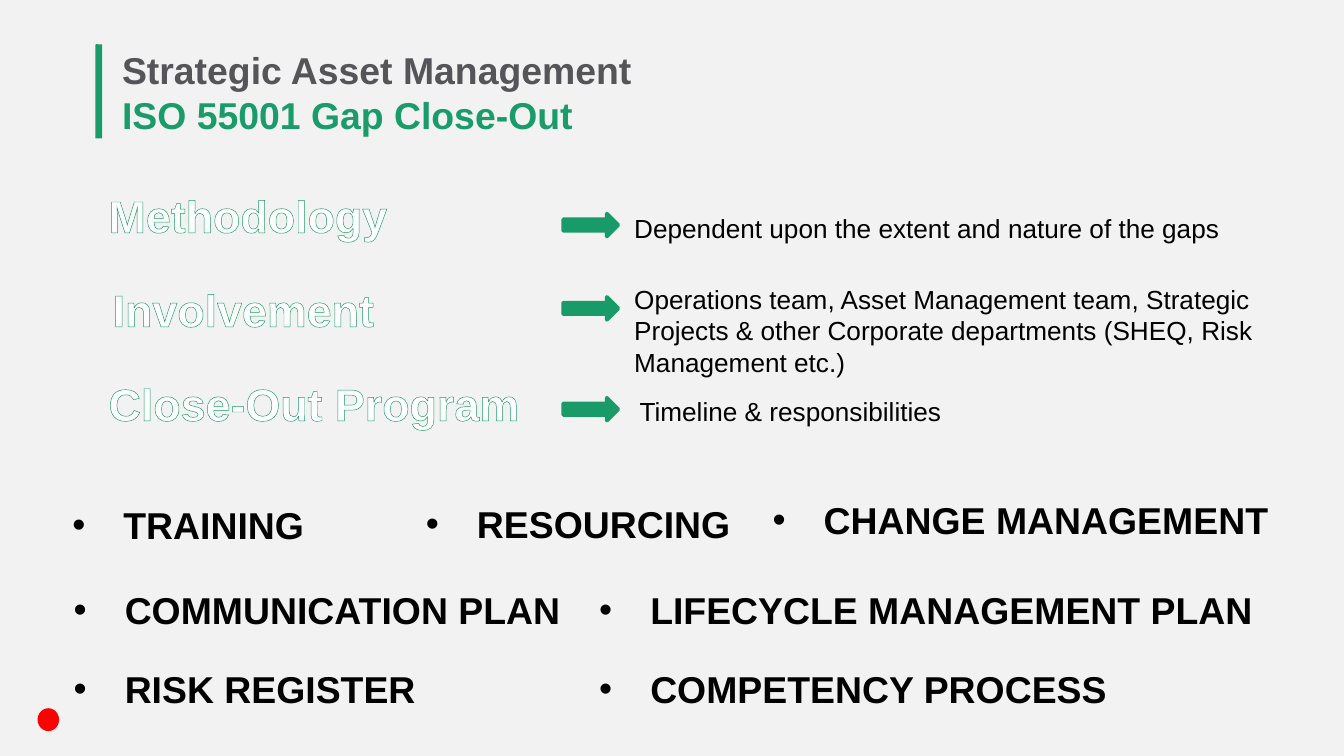
from lxml import etree
from pptx import Presentation
from pptx.dml.color import RGBColor
from pptx.enum import shapes, text
from pptx.oxml.ns import qn
from pptx.util import Inches, Pt

PAPER = RGBColor(0xF2, 0xF2, 0xF2)
GREEN = RGBColor(0x19, 0x9C, 0x69)
ARROW_GREEN = RGBColor(0x19, 0x9B, 0x69)
GREY = RGBColor(0x54, 0x54, 0x59)
RED = RGBColor(0xFF, 0x00, 0x00)
BLACK = RGBColor(0, 0, 0)
WHITE = RGBColor(0xFF, 0xFF, 0xFF)


def style(font, size, color, bold=False):
    font.name = "Arial"
    font.size = Pt(size)
    font.bold = bold
    font.color.rgb = color


def add_text(slide, left, top, width, height):
    box = slide.shapes.add_textbox(Inches(left), Inches(top), Inches(width), Inches(height))
    frame = box.text_frame
    frame.word_wrap = True
    return frame


def add_solid(slide, kind, left, top, width, height, color):
    solid = slide.shapes.add_shape(kind, Inches(left), Inches(top), Inches(width), Inches(height))
    solid.shadow.inherit = False
    solid.fill.solid()
    solid.fill.fore_color.rgb = color
    solid.line.fill.background()
    return solid


def add_color(parent, color):
    fill = etree.SubElement(parent, qn("a:solidFill"))
    etree.SubElement(fill, qn("a:srgbClr"), val=str(color))


def outline(run, color, width):
    line = etree.Element(qn("a:ln"), w=str(int(Pt(width))))
    add_color(line, color)
    run.font._element.insert(0, line)


def add_bullet(paragraph, indent):
    properties = paragraph._p.get_or_add_pPr()
    properties.set("marL", str(Inches(indent)))
    properties.set("indent", str(-Inches(indent)))
    bullet_color = etree.SubElement(properties, qn("a:buClr"))
    etree.SubElement(bullet_color, qn("a:srgbClr"), val=str(BLACK))
    etree.SubElement(properties, qn("a:buFont"), typeface="Arial")
    etree.SubElement(properties, qn("a:buChar"), char="•")


def add_header(slide, left, top, width, height):
    bar = add_solid(slide, shapes.MSO_SHAPE.ROUNDED_RECTANGLE, left, top + 0.05, 0.05, 0.7, GREEN)
    bar.adjustments[0] = 0.11
    title = add_text(slide, left + 0.1, top, width - 0.1, height)
    title.vertical_anchor = text.MSO_ANCHOR.MIDDLE
    title.margin_top = title.margin_bottom = Inches(0.1)
    lines = (("Strategic Asset Management", GREY), ("ISO 55001 Gap Close-Out", GREEN))
    for number, (wording, color) in enumerate(lines):
        line = title.add_paragraph() if number else title.paragraphs[0]
        line.text = wording
        style(line.font, 20, color, True)


def add_step(slide, left, top, name, name_shift, detail, detail_at, detail_height, arrow_top):
    heading = add_text(slide, left + name_shift, top, 4.13, 0.5).paragraphs[0].add_run()
    heading.text = name
    style(heading.font, 24, WHITE, True)
    outline(heading, ARROW_GREEN, 0.52)

    arrow = add_solid(slide, shapes.MSO_SHAPE.RIGHT_ARROW, left + 3.48, top + arrow_top,
                      0.41, 0.17, ARROW_GREEN)
    arrow.line.color.rgb = ARROW_GREEN
    arrow.line.width = Pt(2)

    shift, drop = detail_at
    explanation = add_text(slide, left + shift, top + drop, 5.15, detail_height).paragraphs[0]
    explanation.text = detail
    style(explanation.font, 14, BLACK)


def add_topic(slide, left, top, width, wording):
    topic = add_text(slide, left, top, width, 0.44).paragraphs[0]
    topic.text = wording
    add_bullet(topic, 0.38)
    style(topic.font, 20, BLACK, True)


def main():
    deck = Presentation()
    deck.slide_width = Inches(10)
    deck.slide_height = deck.slide_width * 9 // 16
    slide = deck.slides.add_slide(deck.slide_layouts[6])
    slide.background.fill.solid()
    slide.background.fill.fore_color.rgb = PAPER

    add_solid(slide, shapes.MSO_SHAPE.OVAL, 0.28, 5.27, 0.16, 0.17, RED)
    add_header(slide, 0.71, 0.28, 8.84, 0.81)

    steps = (
        ("Methodology", 0, "Dependent upon the extent and nature of the gaps",
         (3.91, 0.18), 0.34, 0.24),
        ("Involvement", 0.03,
         "Operations team, Asset Management team, Strategic Projects & other "
         "Corporate departments (SHEQ, Risk Management etc.)",
         (3.91, 0.01), 0.81, 0.16),
        ("Close-Out Program", 0, "Timeline & responsibilities",
         (3.95, 0.14), 0.34, 0.21),
    )
    for row, step in enumerate(steps):
        add_step(slide, 0.71, 1.35 + 0.7 * row, *step)

    topics = (
        (0.44, 3.69, 2.23, "TRAINING"),
        (3.07, 3.68, 2.75, "RESOURCING"),
        (5.65, 3.65, 3.91, "CHANGE MANAGEMENT"),
        (0.45, 4.32, 4.05, "COMMUNICATION PLAN"),
        (4.36, 4.32, 5.18, "LIFECYCLE MANAGEMENT PLAN"),
        (0.45, 4.91, 2.95, "RISK REGISTER"),
        (4.36, 4.91, 4.29, "COMPETENCY PROCESS"),
    )
    for topic in topics:
        add_topic(slide, *topic)

    deck.save("out.pptx")


if __name__ == "__main__":
    main()
